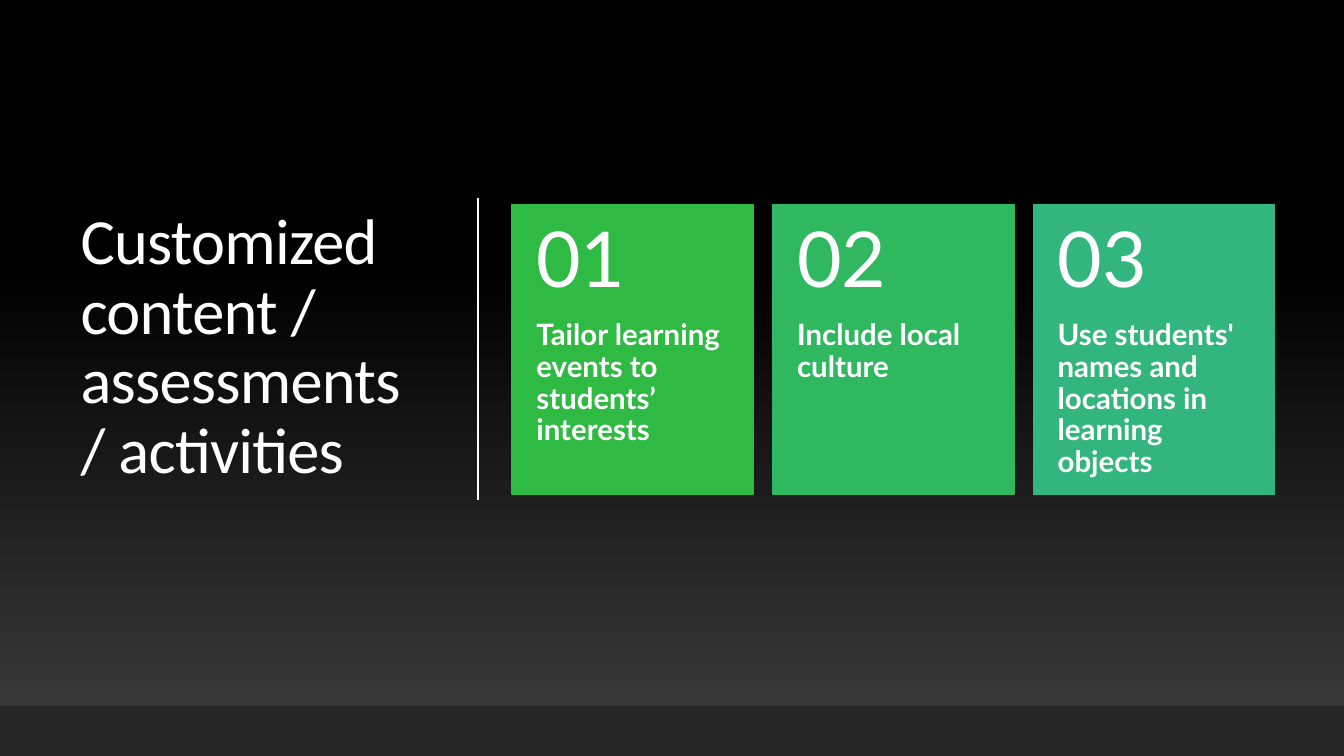
"""Build a dark slide with a title, a divider and three numbered green cards."""
from pptx import Presentation
from pptx.dml.color import RGBColor as RGB
from pptx.enum.shapes import MSO_CONNECTOR as CONN, MSO_SHAPE as SHAPE
from pptx.enum.text import MSO_ANCHOR as ANCHOR, PP_ALIGN as ALIGN
from pptx.oxml.ns import qn
from pptx.util import Inches, Pt
from lxml import etree

WHITE = RGB(0xFF, 0xFF, 0xFF)
BLACK = RGB(0x00, 0x00, 0x00)
GREY = RGB(0x3F, 0x3F, 0x3F)
FOOTER = RGB(0x26, 0x26, 0x26)
CARDS = [
    (RGB(0x2E, 0xBA, 0x43), "Tailor learning events to students’ interests"),
    (RGB(0x30, 0xB8, 0x61), "Include local culture"),
    (RGB(0x33, 0xB6, 0x7D), "Use students' names and locations in learning objects"),
]
TITLE_FONT = {"name": "Calibri", "size": Pt(46)}
NUMBER_FONT = {"name": "Lato", "size": Pt(55)}
BODY_FONT = {"name": "Lato", "size": Pt(21), "bold": True}

WIDTH, HEIGHT = 13.33, 7.5
FOOTER_TOP = HEIGHT * 14 / 15
CARD_LEFT, CARD_RIGHT, CARD_TOP = 5.08, 12.64, 2.03
CARD_W, CARD_H = 2.39, 2.87
PITCH = (CARD_RIGHT - CARD_LEFT - CARD_W) / (len(CARDS) - 1)
NUMBER_H = CARD_H * 0.4

prs = Presentation()
prs.slide_width, prs.slide_height = Inches(WIDTH), Inches(HEIGHT)
s = prs.slides.add_slide(prs.slide_layouts[6])


def add_rect(*box):
    sp = s.shapes.add_shape(SHAPE.RECTANGLE, *map(Inches, box))
    sp.shadow.inherit = False
    sp.line.fill.background()
    return sp


def add_text(box, text, font, anchor, insets):
    tf = s.shapes.add_textbox(*map(Inches, box)).text_frame
    tf.word_wrap = True
    tf.vertical_anchor = anchor
    for side, inset in zip(("left", "top", "right", "bottom"), insets):
        setattr(tf, f"margin_{side}", Inches(inset))
    p = tf.paragraphs[0]
    p.alignment, p.line_spacing = ALIGN.LEFT, 0.9
    r = p.add_run()
    r.text = text
    r.font.color.rgb = WHITE
    for key, value in font.items():
        setattr(r.font, key, value)
    return r


backdrop = add_rect(0, 0, WIDTH, HEIGHT)
for fill in (s.background.fill, backdrop.fill):
    fill.gradient()
    fill.gradient_angle = 90
    for stop, color, position in zip(fill.gradient_stops, (GREY, BLACK), (0, 0.65)):
        stop.color.rgb = color
        stop.position = position

title = add_text((0.7, 0.69, 3.69, 5.53), "Customized content / assessments / activities",
                 TITLE_FONT, ANCHOR.MIDDLE, (0.1, 0.05, 0.1, 0.05))
title.font._element.set("spc", "-50")

divider = s.shapes.add_connector(CONN.STRAIGHT, *map(Inches, (4.74, 1.96, 4.74, 4.96)))
divider.line.color.rgb = WHITE
divider.line.width = Pt(1)
etree.SubElement(divider._element.spPr, qn("a:effectLst"))

footer = add_rect(0, FOOTER_TOP, WIDTH, HEIGHT - FOOTER_TOP)
footer.fill.solid()
footer.fill.fore_color.rgb = FOOTER

for i, (color, text) in enumerate(CARDS):
    left = CARD_LEFT + i * PITCH
    card = add_rect(left, CARD_TOP, CARD_W, CARD_H)
    for fill in (card.fill, card.line.fill):
        fill.solid()
        fill.fore_color.rgb = color
    card.line.width = Pt(1.25)
    add_text((left, CARD_TOP + NUMBER_H, CARD_W, CARD_H - NUMBER_H), text,
             BODY_FONT, ANCHOR.TOP, (0.24, 0, 0.24, 0.36))
    add_text((left, CARD_TOP, CARD_W, NUMBER_H), f"{i + 1:02d}",
             NUMBER_FONT, ANCHOR.MIDDLE, (0.24, 0.18, 0.24, 0.18))

prs.save("out.pptx")
